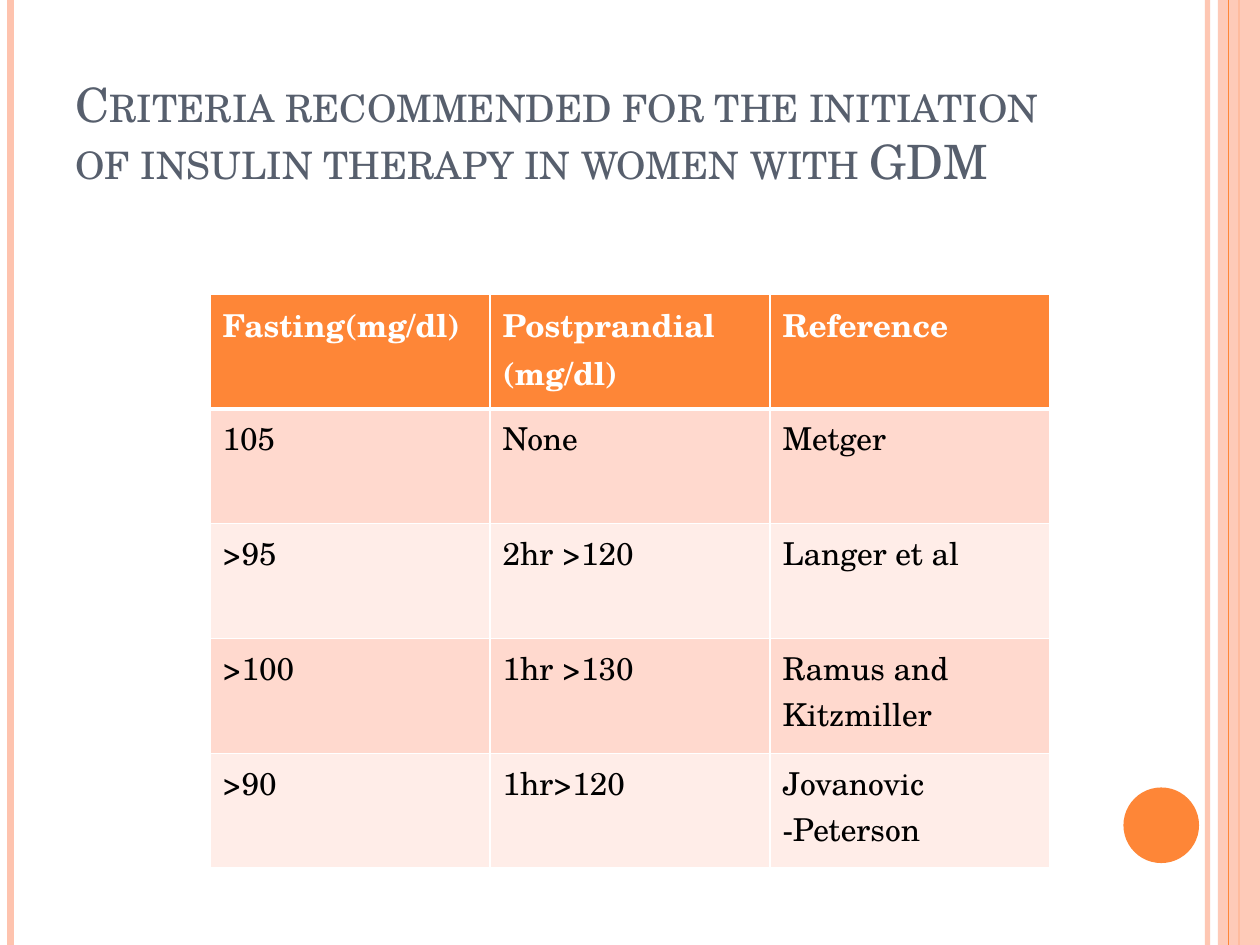
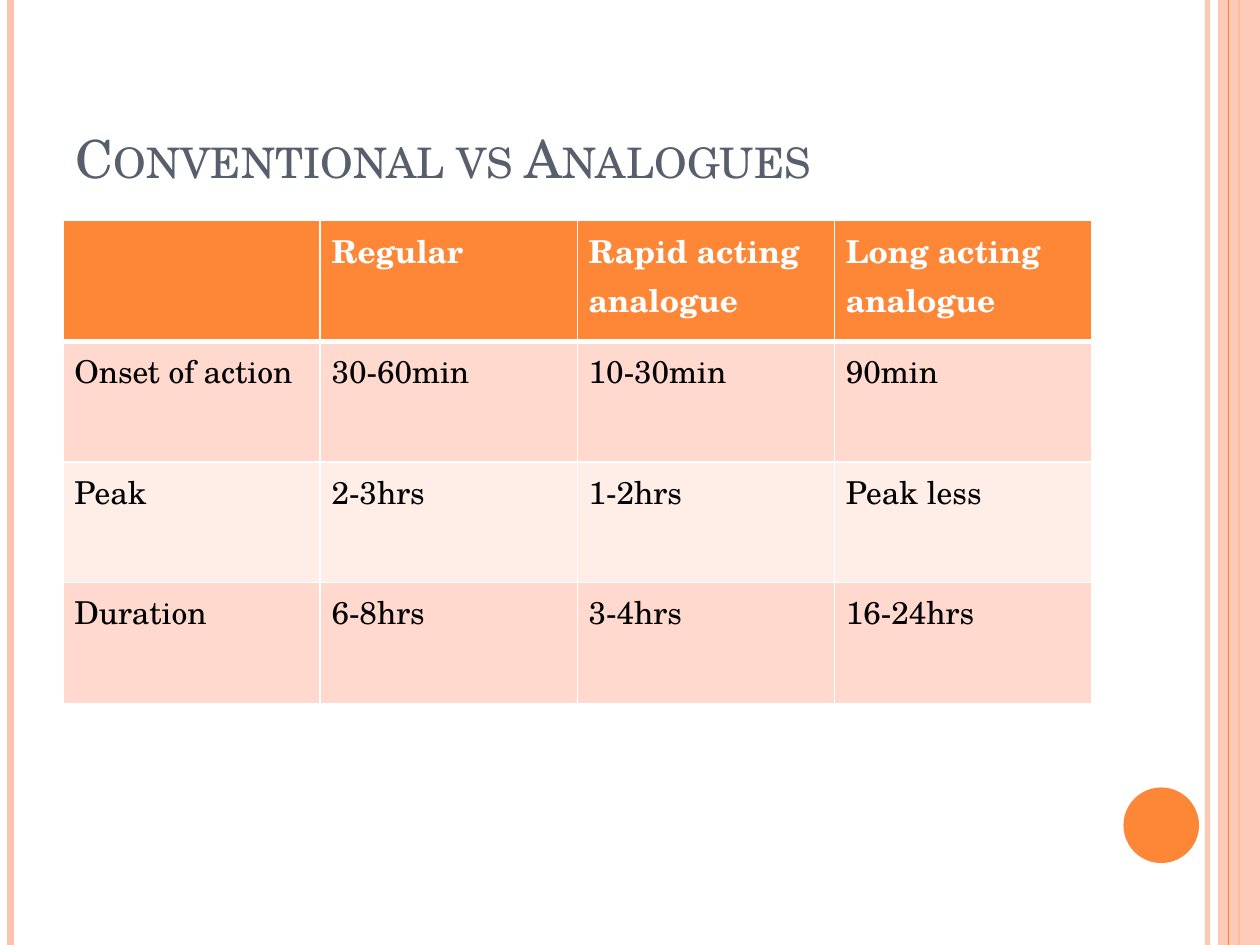
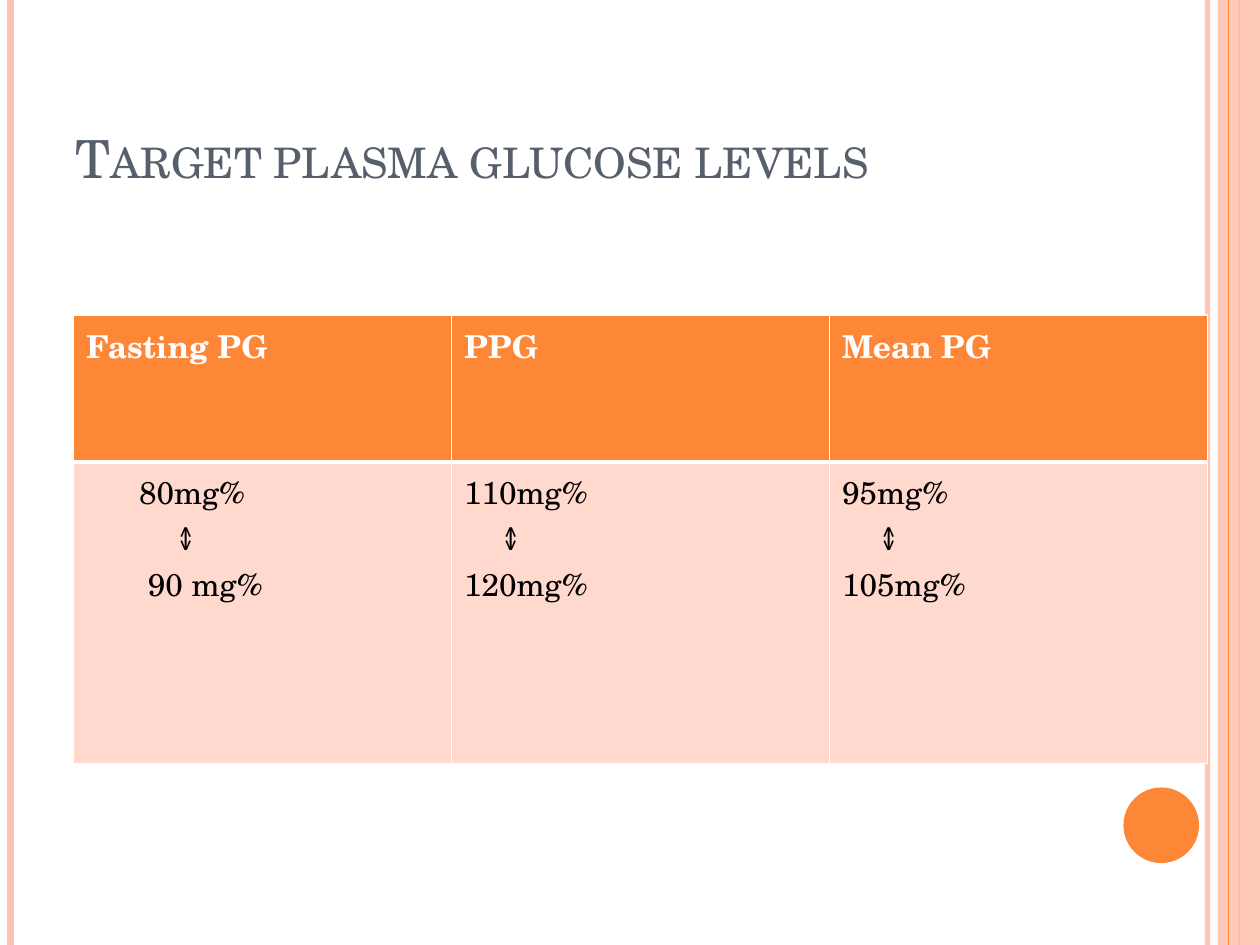
from dataclasses import dataclass
from typing import NamedTuple

from lxml.etree import SubElement
from pptx import Presentation
from pptx.dml.color import RGBColor
from pptx.enum.shapes import MSO_CONNECTOR, MSO_SHAPE
from pptx.enum.text import MSO_ANCHOR, MSO_AUTO_SIZE, PP_ALIGN
from pptx.oxml.ns import qn
from pptx.util import Emu, Inches, Pt

COLUMNS, ROWS = 120, 90
UNIT = Inches(10) // COLUMNS
ORANGE, PEACH, SLATE = "FE8637", "FEC3AE", "575F6D"
WHITE, BLACK = "FFFFFF", "000000"
BODY_FILLS = ("FFD9CE", "FFEDE8")
FONT = "TeX Gyre Schola"
SPACE = 0.84
THIN, THICK = 1, 3
TITLE_BOX = {"left": 6, "top": 3.6, "width": 98, "height": 15}
TITLE_FRAME = {
    "auto_size": MSO_AUTO_SIZE.NONE,
    "vertical_anchor": MSO_ANCHOR.BOTTOM,
    "word_wrap": True,
}


class Rule(NamedTuple):
    """A full-height vertical line on the page grid."""

    column: float
    color: str
    weight: float
    opacity: int = 100


class Block(NamedTuple):
    """A filled preset shape on the page grid."""

    preset: MSO_SHAPE
    left: float
    top: float
    width: float
    height: float
    color: str
    opacity: int = 100


class Line(NamedTuple):
    """One paragraph of a table cell, indented by a number of letter spaces."""

    text: str
    spaces: int = 0


@dataclass
class Grid:
    """A table with its place, row heights and cell contents."""

    left: float
    top: float
    width: float
    heights: list[float]
    rows: list[list[str | tuple[Line, ...]]]
    side_inset: float = 0.1


@dataclass
class Page:
    """A titled page holding one table."""

    title: str
    grid: Grid
    title_size: int = 30


FURNITURE = [
    Rule(115, PEACH, 3, 93),
    Rule(1, PEACH, 4.5),
    Rule(118, ORANGE, 1.5),
    Block(MSO_SHAPE.RECTANGLE, 116, 0, 4, ROWS, PEACH, 87),
    Rule(117, ORANGE, 0.75),
    Block(MSO_SHAPE.OVAL, 107, 75, 7.2, 7.2, ORANGE),
]

PAGES = [
    Page(
        "Criteria recommended for the initiation of insulin therapy in women with GDM",
        Grid(20, 28, 80, [10.94] * 5, [
            ["Fasting(mg/dl)", "Postprandial (mg/dl)", "Reference"],
            ["105", "None", "Metger"],
            [">95", "2hr >120", "Langer et al"],
            [">100", "1hr >130", "Ramus and Kitzmiller"],
            [">90", "1hr>120", "Jovanovic -Peterson"],
        ]),
        title_size=27,
    ),
    Page(
        "Conventional vs Analogues",
        Grid(6, 21, 98, [11.5] * 4, [
            ["", "Regular", "Rapid acting analogue", "Long acting analogue"],
            ["Onset of action", "30-60min", "10-30min", "90min"],
            ["Peak", "2-3hrs", "1-2hrs", "Peak less"],
            ["Duration", "6-8hrs", "3-4hrs", "16-24hrs"],
        ], side_inset=0.09),
    ),
    Page(
        "Target plasma glucose levels",
        Grid(7, 30, 108, [14, 28.7], [
            ["Fasting PG", "PPG", "Mean PG"],
            [
                (Line("80mg%", 6), Line("↕", 10), Line("90 mg%", 7)),
                (Line("110mg%"), Line("↕", 4), Line("120mg%")),
                (Line("95mg%"), Line("↕", 4), Line("105mg%")),
            ],
        ]),
    ),
]


def units(count: float) -> Emu:
    """Turn grid units into a length."""
    return Emu(round(count * UNIT))


def rgb(color: str) -> RGBColor:
    """Turn a hex string into a colour."""
    return RGBColor.from_string(color)


def assign(target, values: dict) -> None:
    """Set each named attribute of the target."""
    for name, value in values.items():
        setattr(target, name, value)


def style_span(span, size: float, color: str, bold: bool = False) -> None:
    """Give a run its font, size, weight and colour."""
    assign(span.font, {"name": FONT, "size": Pt(size), "bold": bold})
    span.font.color.rgb = rgb(color)


def set_opacity(shape, percent: int) -> None:
    """Make the colours in the properties of a shape partly transparent."""
    if percent < 100:
        for color in shape.element.spPr.iter(qn("a:srgbClr")):
            SubElement(color, qn("a:alpha"), val=str(percent * 1000))


def draw_rule(page, rule: Rule):
    """Draw a vertical line from the top to the bottom of the page."""
    x = units(rule.column)
    connector = page.shapes.add_connector(MSO_CONNECTOR.STRAIGHT, x, 0, x, units(ROWS))
    connector.line.color.rgb = rgb(rule.color)
    connector.line.width = Pt(rule.weight)
    SubElement(connector.element.spPr, qn("a:effectLst"))
    return connector


def draw_block(page, block: Block):
    """Draw a filled shape without outline or shadow."""
    place = (block.left, block.top, block.width, block.height)
    shape = page.shapes.add_shape(block.preset, *map(units, place))
    shape.fill.solid()
    shape.fill.fore_color.rgb = rgb(block.color)
    shape.line.fill.background()
    shape.shadow.inherit = False
    return shape


def furnish_layout(layout, page) -> None:
    """Draw the shared furniture on a page and move it to its layout."""
    for holder in list(layout.placeholders):
        if holder.placeholder_format.idx != 0:
            layout.shapes.element.remove(holder.element)
    for item in FURNITURE:
        draw = draw_rule if isinstance(item, Rule) else draw_block
        shape = draw(page, item)
        set_opacity(shape, item.opacity)
        layout.shapes.element.append(shape.element)


def write_title(page, text: str, size: int) -> None:
    """Place the title placeholder and write it in small capitals."""
    box = page.shapes.title
    assign(box, {name: units(count) for name, count in TITLE_BOX.items()})
    assign(box.text_frame, TITLE_FRAME)
    para = box.text_frame.paragraphs[0]
    para.alignment = PP_ALIGN.LEFT
    span = para.add_run()
    span.text = text
    style_span(span, size, SLATE)
    span.font._element.set("cap", "small")


def set_borders(cell, top: float, bottom: float) -> None:
    """Give a cell white borders, thin at both sides."""
    properties = cell._tc.get_or_add_tcPr()
    for side, weight in {"L": THIN, "R": THIN, "T": top, "B": bottom}.items():
        line = SubElement(properties, qn(f"a:ln{side}"), w=str(Pt(weight)))
        fill = SubElement(line, qn("a:solidFill"))
        SubElement(fill, qn("a:srgbClr"), val=WHITE)


def fill_cell(cell, content: str | tuple[Line, ...], row: int, inset: float) -> None:
    """Write and colour a cell according to its row."""
    header = row == 0
    assign(cell, {"margin_left": Inches(inset), "margin_right": Inches(inset)})
    set_borders(cell, THICK if row == 1 else THIN, THICK if header else THIN)
    cell.fill.solid()
    cell.fill.fore_color.rgb = rgb(ORANGE if header else BODY_FILLS[(row - 1) % 2])
    lines = (Line(content),) if isinstance(content, str) else content
    for index, line in enumerate(lines):
        frame = cell.text_frame
        para = frame.add_paragraph() if index else frame.paragraphs[0]
        if line.spaces:
            para._p.get_or_add_pPr().set("marL", str(units(line.spaces * SPACE)))
        if line.text:
            span = para.add_run()
            span.text = line.text
            style_span(span, 18, WHITE if header else BLACK, header)


def draw_grid(page, grid: Grid) -> None:
    """Draw a table with equal columns."""
    columns = len(grid.rows[0])
    place = (grid.left, grid.top, grid.width, sum(grid.heights))
    table = page.shapes.add_table(len(grid.rows), columns, *map(units, place)).table
    assign(table, {"first_row": False, "horz_banding": False})
    for row, contents in enumerate(grid.rows):
        table.rows[row].height = units(grid.heights[row])
        for column, content in enumerate(contents):
            fill_cell(table.cell(row, column), content, row, grid.side_inset)


def main() -> None:
    """Build the deck and save it."""
    deck = Presentation()
    assign(deck, {"slide_width": units(COLUMNS), "slide_height": units(ROWS)})
    layout = deck.slide_layouts.get_by_name("Title Only")
    for index, content in enumerate(PAGES):
        page = deck.slides.add_slide(layout)
        if index == 0:
            furnish_layout(layout, page)
        write_title(page, content.title, content.title_size)
        draw_grid(page, content.grid)
    deck.save("out.pptx")


if __name__ == "__main__":
    main()
